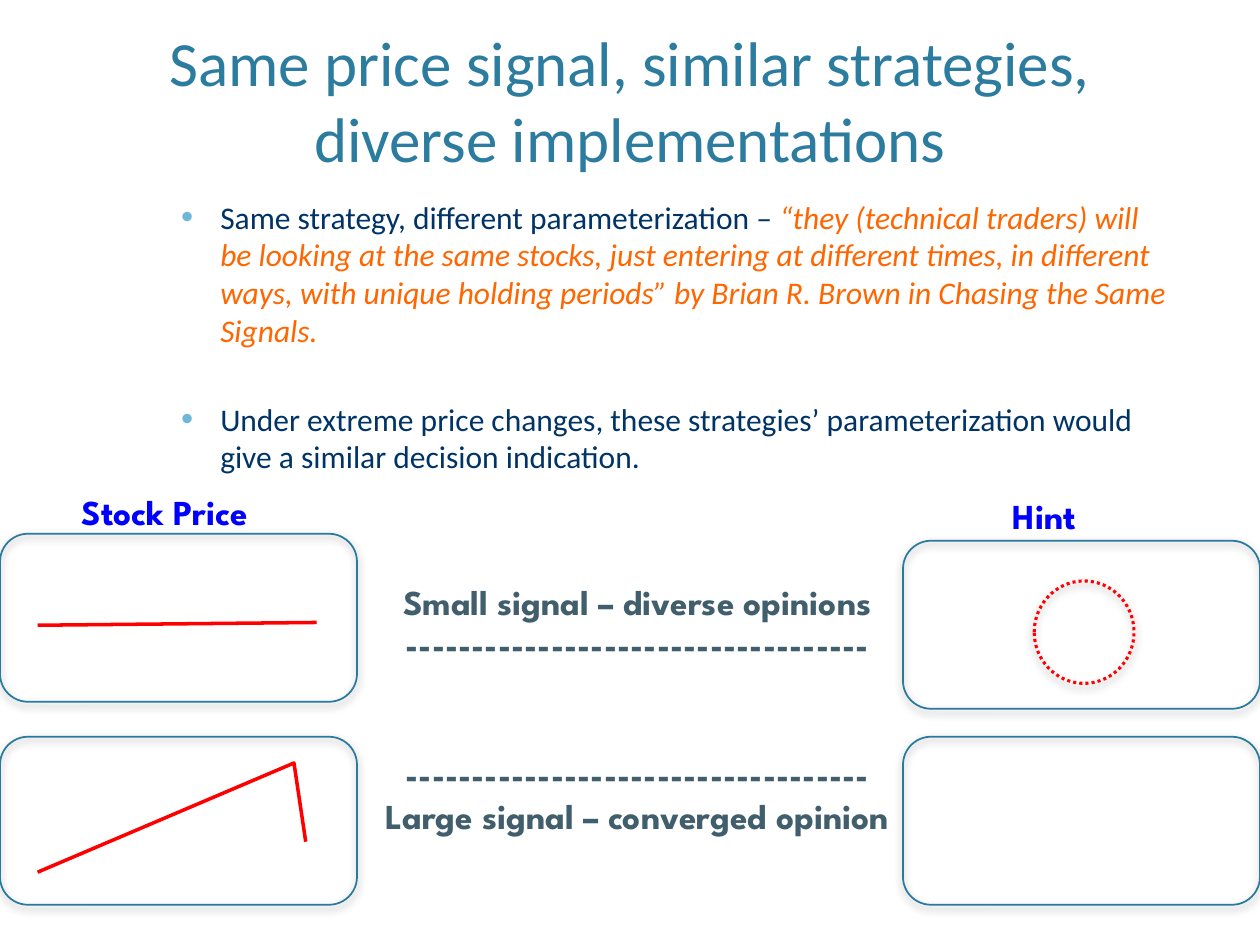
"""Build the slide on one price signal and diverse strategy implementations."""
from lxml import etree
from pptx import Presentation
from pptx.dml.color import RGBColor
from pptx.enum.dml import MSO_LINE
from pptx.enum.shapes import MSO_CONNECTOR, MSO_SHAPE
from pptx.enum.text import MSO_ANCHOR, PP_ALIGN
from pptx.oxml.ns import qn
from pptx.util import Pt

LEFT, CENTER = PP_ALIGN.LEFT, PP_ALIGN.CENTER
TOP, BOTTOM = MSO_ANCHOR.TOP, MSO_ANCHOR.BOTTOM
ROUNDED, OVAL = MSO_SHAPE.ROUNDED_RECTANGLE, MSO_SHAPE.OVAL
STRAIGHT, DOTTED = MSO_CONNECTOR.STRAIGHT, MSO_LINE.ROUND_DOT

TITLE_BLUE = RGBColor(0x2C, 0x7C, 0x9F)
PANEL_BLUE = RGBColor(0x28, 0x7A, 0x9E)
NAVY = RGBColor(0x00, 0x33, 0x66)
ORANGE = RGBColor(0xFF, 0x66, 0x00)
SLATE = RGBColor(0x41, 0x5E, 0x6D)
BLUE = RGBColor(0x00, 0x00, 0xFF)
RED = RGBColor(0xFF, 0x00, 0x00)
BULLET_BLUE = "6FB7D7"

BODY_FONT, LABEL_FONT = "Calibri", "League Spartan"

TITLE = "Same price signal, similar strategies, diverse implementations"
POINTS = [
    (6, [("Same strategy, different parameterization – ", NAVY, False),
         ("“they (technical traders) will be looking at the same stocks, just "
          "entering at different times, in different ways, with unique holding "
          "periods” by Brian R. Brown in Chasing the Same Signals.", ORANGE, True)]),
    (29, [("Under extreme price changes, these strategies’ parameterization "
           "would give a similar decision indication.", NAVY, False)]),
]
DASHES = "-" * 35
LABELS = [
    (["Small signal – diverse opinions", DASHES], (137.5, 328.3, 453.6, 55.4), CENTER, SLATE),
    ([DASHES, "Large signal – converged opinion"], (137.5, 426.2, 453.6, 55.4), CENTER, SLATE),
    (["Stock Price"], (39.6, 276.5, 126, 31.5), LEFT, BLUE),
    (["Hint"], (571.7, 278.8, 126, 31.5), LEFT, BLUE),
]
PANEL_WIDTH, PANEL_HEIGHT = 204, 96
PRICE_LEFT, HINT_LEFT = 0, 720 - PANEL_WIDTH
PANELS = [(PRICE_LEFT, 305), (HINT_LEFT, 309), (PRICE_LEFT, 421), (HINT_LEFT, 421)]
HINT_CIRCLE = (591, 332, 57, 58.5)
FLAT_PRICE = (21.5, 357.3, 181, 355.7)
SPIKE_PRICE = [(21.5, 498.4), (168, 436), (174.7, 481)]


def points(values):
    return [Pt(value) for value in values]


def add_text_frame(slide, box, anchor=TOP):
    frame = slide.shapes.add_textbox(*points(box)).text_frame
    frame.word_wrap = True
    frame.vertical_anchor = anchor
    return frame


def add_run(paragraph, text, font, size, color, bold=False, italic=False):
    run = paragraph.add_run()
    run.text = text
    run.font.name, run.font.size = font, Pt(size)
    run.font.bold, run.font.italic = bold, italic
    run.font.color.rgb = color


def next_paragraph(frame, index):
    return frame.add_paragraph() if index else frame.paragraphs[0]


def add_bullet(paragraph):
    props = paragraph._p.get_or_add_pPr()
    props.set("marL", str(Pt(76.3)))
    props.set("indent", str(Pt(-22.3)))
    color = etree.SubElement(props, qn("a:buClr"))
    etree.SubElement(color, qn("a:srgbClr"), val=BULLET_BLUE)
    etree.SubElement(props, qn("a:buSzPct"), val="110000")
    etree.SubElement(props, qn("a:buFont"), typeface="Arial")
    etree.SubElement(props, qn("a:buChar"), char="•")


def set_line(shape, color, width):
    shape.line.color.rgb = color
    shape.line.width = Pt(width)


def add_outline(slide, kind, box, color, width):
    shape = slide.shapes.add_shape(kind, *points(box))
    shape.fill.background()
    set_line(shape, color, width)
    shape.shadow.inherit = False
    effects = shape._element.spPr.find(qn("a:effectLst"))
    shadow = etree.SubElement(effects, qn("a:outerShdw"), blurRad=str(Pt(5)),
                              dist=str(Pt(2)), dir="5400000", rotWithShape="0")
    shade = etree.SubElement(shadow, qn("a:srgbClr"), val="000000")
    etree.SubElement(shade, qn("a:alpha"), val="40000")
    return shape


def main():
    deck = Presentation()
    deck.slide_width, deck.slide_height = Pt(720), Pt(540)
    slide = deck.slides.add_slide(deck.slide_layouts[6])

    title = add_text_frame(slide, (43.2, 8.6, 633.6, 95), BOTTOM).paragraphs[0]
    title.alignment = CENTER
    add_run(title, TITLE, BODY_FONT, 36, TITLE_BLUE)

    body = add_text_frame(slide, (42.5, 109.4, 633.6, 342))
    for index, (space, runs) in enumerate(POINTS):
        point = next_paragraph(body, index)
        point.space_before = Pt(space)
        add_bullet(point)
        for text, color, italic in runs:
            add_run(point, text, BODY_FONT, 18, color, italic=italic)

    for lines, box, alignment, color in LABELS:
        label = add_text_frame(slide, box)
        for index, text in enumerate(lines):
            line = next_paragraph(label, index)
            line.alignment = alignment
            add_run(line, text, LABEL_FONT, 20, color, bold=True)

    for corner in PANELS:
        add_outline(slide, ROUNDED, (*corner, PANEL_WIDTH, PANEL_HEIGHT), PANEL_BLUE, 1)
    circle = add_outline(slide, OVAL, HINT_CIRCLE, RED, 1.75)
    circle.line.dash_style = DOTTED

    flat_price = slide.shapes.add_connector(STRAIGHT, *points(FLAT_PRICE))
    set_line(flat_price, RED, 2)
    etree.SubElement(flat_price._element.spPr, qn("a:effectLst"))

    start, *turns = [points(spot) for spot in SPIKE_PRICE]
    builder = slide.shapes.build_freeform(*start)
    builder.add_line_segments(turns, close=False)
    spike_price = builder.convert_to_shape()
    spike_price.fill.background()
    set_line(spike_price, RED, 2)
    spike_price.shadow.inherit = False

    deck.save("out.pptx")


if __name__ == "__main__":
    main()
